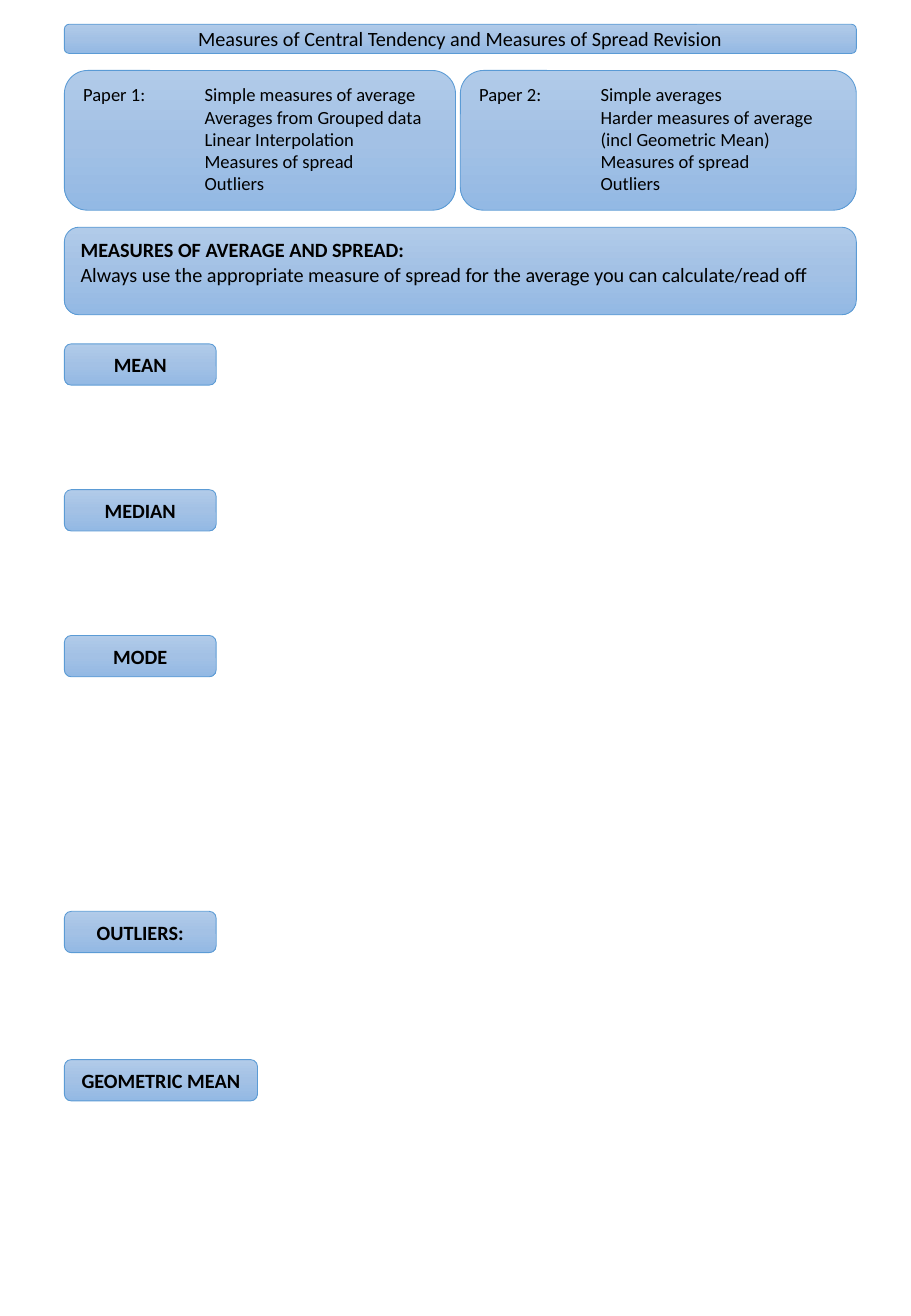
from copy import deepcopy

from lxml import etree
from pptx import Presentation
from pptx.dml.color import RGBColor
from pptx.enum.shapes import MSO_SHAPE
from pptx.enum.text import MSO_ANCHOR, PP_ALIGN
from pptx.oxml.ns import qn
from pptx.util import Inches, Pt

ROUNDED = MSO_SHAPE.ROUNDED_RECTANGLE
TOP, MIDDLE = MSO_ANCHOR.TOP, MSO_ANCHOR.MIDDLE
LEFT, CENTER = PP_ALIGN.LEFT, PP_ALIGN.CENTER

THEME = {
    "font": "Calibri",
    "text": RGBColor.from_string("000000"),
    "line": RGBColor.from_string("5B9BD5"),
    "gradient": ["B1CBE9", "A3C1E5", "93B9E4"],
    "body": Pt(12),
    "small": Pt(11),
    "line_width": Pt(0.5),
}

TITLE = "Measures of Central Tendency and Measures of Spread Revision"
PAPERS = [
    ("Paper 1: ", 0.53, 3.22, [
        "Simple measures of average", "Averages from Grouped data",
        "Linear Interpolation", "Measures of spread", "Outliers"]),
    ("Paper 2: ", 3.79, 3.26, [
        "Simple averages", "Harder measures of average",
        "(incl Geometric Mean)", "Measures of spread", "Outliers"]),
]
ADVICE = [
    ("MEASURES OF AVERAGE AND SPREAD:", True),
    ("Always use the appropriate measure of spread "
     "for the average you can calculate/read off", False),
]
AVERAGES = ["MEAN", "MEDIAN", "MODE"]
LATER_TOPICS = [("OUTLIERS:", 7.5, 1.25), ("GEOMETRIC MEAN", 8.72, 1.59)]

MARGIN, FULL_WIDTH = 0.53, 6.52
FIRST_TOPIC, TOPIC_STEP = 2.83, 1.2
TOPIC_WIDTH, TOPIC_HEIGHT = 1.25, 0.34
TAB_STOPS = [0.5, 1]


def fill_gradient(box):
    box.fill.gradient()
    box.fill.gradient_angle = 270
    stop_list = box._element.spPr.find(qn("a:gradFill")).find(qn("a:gsLst"))
    stop_list.insert(1, deepcopy(stop_list[0]))
    for index, stop in enumerate(box.fill.gradient_stops):
        stop.color.rgb = RGBColor.from_string(THEME["gradient"][index])
        stop.position = index / 2


def add_tabs(para):
    tabs = etree.SubElement(para._p.get_or_add_pPr(), qn("a:tabLst"))
    for stop in TAB_STOPS:
        etree.SubElement(tabs, qn("a:tab"), pos=str(Inches(stop)), algn="l")


def add_box(page, left, top, width, height, lines, size,
            anchor=MIDDLE, align=CENTER):
    box = page.shapes.add_shape(
        ROUNDED, Inches(left), Inches(top), Inches(width), Inches(height))
    box.shadow.inherit = False
    fill_gradient(box)
    box.line.color.rgb = THEME["line"]
    box.line.width = THEME["line_width"]
    frame = box.text_frame
    frame.word_wrap = True
    frame.vertical_anchor = anchor
    for index, (text, bold) in enumerate(lines):
        para = frame.add_paragraph() if index else frame.paragraphs[0]
        para.alignment = align
        if "\t" in text:
            add_tabs(para)
        span = para.add_run()
        span.text = text
        span.font.name = THEME["font"]
        span.font.size = size
        span.font.bold = bold
        span.font.color.rgb = THEME["text"]


def main():
    deck = Presentation()
    deck.slide_width, deck.slide_height = Inches(7.5), Inches(10.83)
    page = deck.slides.add_slide(deck.slide_layouts[6])

    add_box(page, MARGIN, 0.2, FULL_WIDTH, 0.24, [(TITLE, False)], THEME["body"])
    for paper, left, width, topics in PAPERS:
        lines = [((f"{paper}\t" if index == 0 else "\t\t") + topic, False)
                 for index, topic in enumerate(topics)]
        add_box(page, left, 0.58, width, 1.15, lines, THEME["small"], TOP, LEFT)
    add_box(page, MARGIN, 1.87, FULL_WIDTH, 0.72, ADVICE, THEME["body"], TOP, LEFT)

    headings = [(name, FIRST_TOPIC + index * TOPIC_STEP, TOPIC_WIDTH)
                for index, name in enumerate(AVERAGES)]
    for name, top, width in headings + LATER_TOPICS:
        add_box(page, MARGIN, top, width, TOPIC_HEIGHT, [(name, True)], THEME["body"])

    deck.save("out.pptx")


if __name__ == "__main__":
    main()
